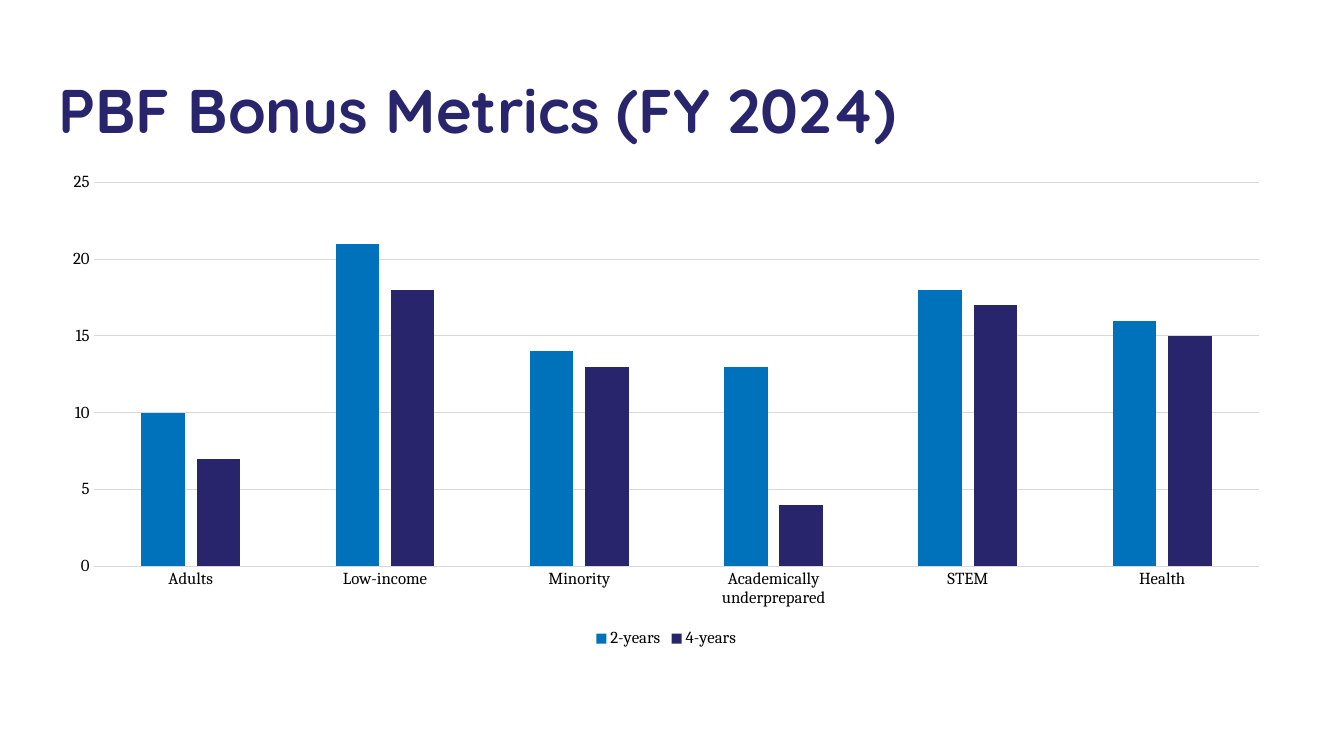
from dataclasses import dataclass

from pptx import Presentation
from pptx.chart.data import CategoryChartData
from pptx.dml.color import RGBColor
from pptx.enum.chart import XL_CHART_TYPE as ChartType
from pptx.enum.chart import XL_LEGEND_POSITION as LegendPosition
from pptx.enum.chart import XL_TICK_MARK as TickMark
from pptx.enum.text import MSO_ANCHOR, MSO_AUTO_SIZE, PP_ALIGN
from pptx.util import Pt

NAVY = RGBColor(0x28, 0x25, 0x6D)
BLUE = RGBColor(0x00, 0x72, 0xBC)
GRAY = RGBColor(0xD9, 0xD9, 0xD9)
BLACK = RGBColor(0x00, 0x00, 0x00)


@dataclass(frozen=True)
class Series:
    name: str
    values: tuple[int, ...]
    color: RGBColor


CATEGORIES = ("Adults", "Low-income", "Minority",
              "Academically underprepared", "STEM", "Health")
SERIES = (
    Series("2-years", (10, 21, 14, 13, 18, 16), BLUE),
    Series("4-years", (7, 18, 13, 4, 17, 15), NAVY),
)


def style_font(font, name: str, size: float, color: RGBColor) -> None:
    font.name = name
    font.size = Pt(size)
    font.color.rgb = color


def style_line(line) -> None:
    line.color.rgb = GRAY
    line.width = Pt(0.75)


def add_title(slide) -> None:
    sp = slide.shapes.title
    sp.left, sp.top, sp.width, sp.height = Pt(34.5), Pt(28.8), Pt(749.5), Pt(104.4)
    tf = sp.text_frame
    tf.text = "PBF Bonus Metrics (FY 2024)"
    tf.vertical_anchor = MSO_ANCHOR.MIDDLE
    tf.auto_size = MSO_AUTO_SIZE.NONE
    p = tf.paragraphs[0]
    p.alignment = PP_ALIGN.LEFT
    p.line_spacing = 0.9
    style_font(p.font, "Quicksand", 44, NAVY)
    p.font.bold = True


def add_metrics_chart(slide) -> None:
    data = CategoryChartData(number_format="General")
    data.categories = CATEGORIES
    for series in SERIES:
        data.add_series(series.name, series.values)
    chart = slide.shapes.add_chart(
        ChartType.COLUMN_CLUSTERED, Pt(34.5), Pt(116.6), Pt(882.7), Pt(349.2), data
    ).chart
    chart.has_title = False
    style_font(chart.font, "Cambria", 10, BLACK)

    plot = chart.plots[0]
    plot.gap_width = 219
    plot.overlap = -27
    plot.vary_by_categories = False
    for bars, series in zip(plot.series, SERIES):
        bars.format.fill.solid()
        bars.format.fill.fore_color.rgb = series.color

    for axis in (chart.category_axis, chart.value_axis):
        axis.major_tick_mark = axis.minor_tick_mark = TickMark.NONE
        style_font(axis.tick_labels.font, "Cambria", 12, BLACK)
    style_line(chart.category_axis.format.line)
    value_axis = chart.value_axis
    value_axis.minimum_scale, value_axis.maximum_scale = 0, 25
    value_axis.major_unit = 5
    value_axis.format.line.fill.background()
    style_line(value_axis.major_gridlines.format.line)

    chart.has_legend = True
    chart.legend.position = LegendPosition.BOTTOM
    chart.legend.include_in_layout = False
    style_font(chart.legend.font, "Cambria", 12, BLACK)


def main() -> None:
    prs = Presentation()
    prs.slide_width, prs.slide_height = Pt(960), Pt(540)
    slide = prs.slides.add_slide(prs.slide_layouts.get_by_name("Title Only"))
    add_title(slide)
    add_metrics_chart(slide)
    prs.save("out.pptx")


if __name__ == "__main__":
    main()
